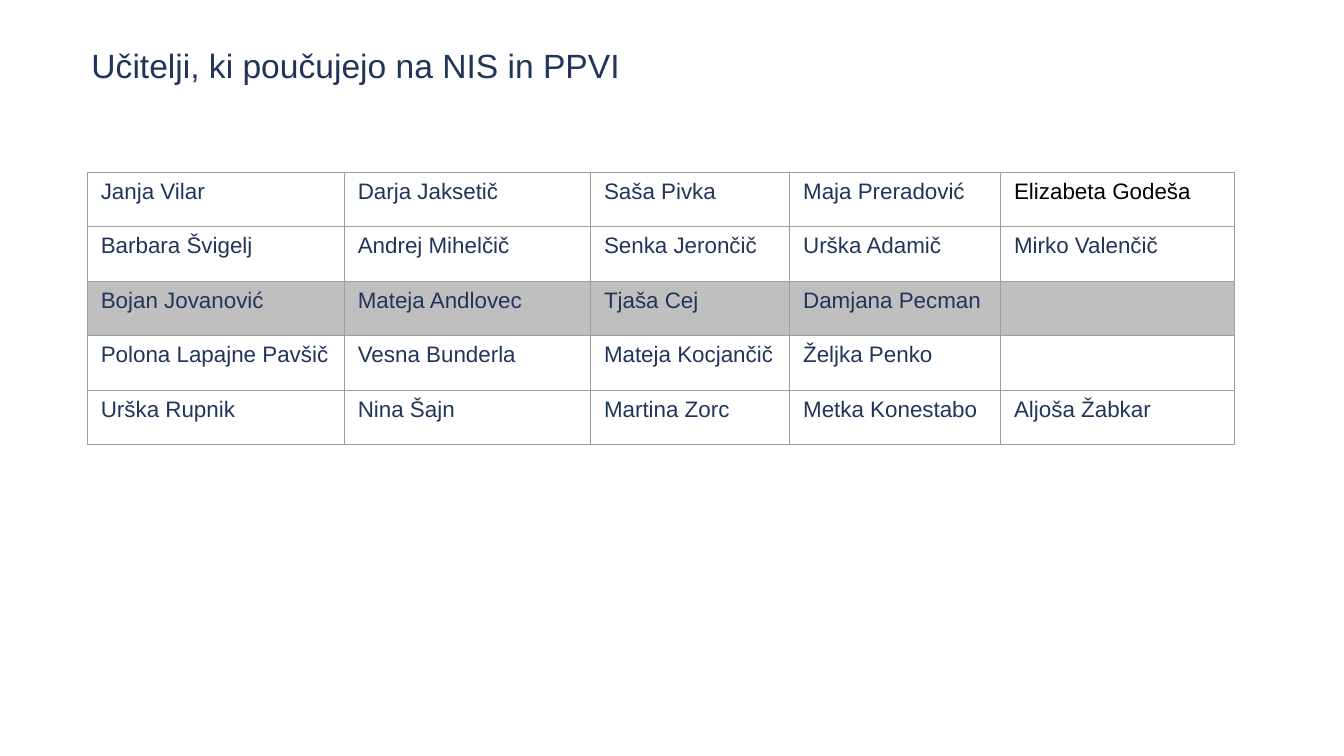
from dataclasses import dataclass

from lxml import etree
from pptx import Presentation
from pptx.dml.color import RGBColor
from pptx.enum import text
from pptx.oxml import ns
from pptx.util import Pt


@dataclass(frozen=True)
class Theme:
    font: str = "Arial"
    ink: str = "21355A"
    guest_ink: str = "000000"
    paper: str = "FFFFFF"
    band: str = "BFBFBF"
    border: str = "9E9E9E"
    border_width: float = 0.75
    title_size: float = 18
    cell_size: float = 12


@dataclass(frozen=True)
class TeacherRow:
    names: tuple[str, ...]
    fill: str


THEME = Theme()
TITLE = "Učitelji, ki poučujejo na NIS in PPVI"
GUEST = "Elizabeta Godeša"
COLUMN_WIDTHS = (137.7, 131.9, 106.7, 113, 125.4)
ROW_HEIGHT = 29.2
ROWS = (
    TeacherRow(("Janja Vilar", "Darja Jaksetič", "Saša Pivka",
                "Maja Preradović", GUEST), THEME.paper),
    TeacherRow(("Barbara Švigelj", "Andrej Mihelčič", "Senka Jerončič",
                "Urška Adamič", "Mirko Valenčič"), THEME.paper),
    TeacherRow(("Bojan Jovanović", "Mateja Andlovec", "Tjaša Cej",
                "Damjana Pecman", ""), THEME.band),
    TeacherRow(("Polona Lapajne Pavšič", "Vesna Bunderla", "Mateja Kocjančič",
                "Željka Penko", ""), THEME.paper),
    TeacherRow(("Urška Rupnik", "Nina Šajn", "Martina Zorc",
                "Metka Konestabo", "Aljoša Žabkar"), THEME.paper),
)


def style_paragraph(p, size: float, color: str) -> None:
    p.alignment = text.PP_ALIGN.LEFT
    p.font.name = THEME.font
    p.font.size = Pt(size)
    p.font.bold = False
    p.font.color.rgb = RGBColor.from_string(color)


def add_borders(cell) -> None:
    tc_pr = cell._tc.get_or_add_tcPr()
    for i, side in enumerate(("lnL", "lnR", "lnT", "lnB")):
        ln = etree.Element(ns.qn(f"a:{side}"), w=str(Pt(THEME.border_width)))
        fill = etree.SubElement(ln, ns.qn("a:solidFill"))
        etree.SubElement(fill, ns.qn("a:srgbClr"), val=THEME.border)
        tc_pr.insert(i, ln)


def set_title(slide) -> None:
    sp = slide.shapes.title
    sp.left, sp.top, sp.width, sp.height = Pt(41.8), Pt(18), Pt(543.6), Pt(36)
    tf = sp.text_frame
    tf.text = TITLE
    tf.word_wrap = True
    tf.auto_size = text.MSO_AUTO_SIZE.NONE
    tf.vertical_anchor = text.MSO_ANCHOR.TOP
    tf.margin_left = tf.margin_right = Pt(7.2)
    tf.margin_top = tf.margin_bottom = Pt(6)
    style_paragraph(tf.paragraphs[0], THEME.title_size, THEME.ink)


def fill_cell(cell, name: str, fill: str) -> None:
    cell.text = name
    cell.fill.solid()
    cell.fill.fore_color.rgb = RGBColor.from_string(fill)
    color = THEME.guest_ink if name == GUEST else THEME.ink
    style_paragraph(cell.text_frame.paragraphs[0], THEME.cell_size, color)
    add_borders(cell)


def add_teachers(slide) -> None:
    table = slide.shapes.add_table(
        len(ROWS), len(COLUMN_WIDTHS), Pt(46.8), Pt(92.2),
        Pt(sum(COLUMN_WIDTHS)), Pt(ROW_HEIGHT * len(ROWS))).table
    table.first_row = table.horz_banding = False
    for column, width in zip(table.columns, COLUMN_WIDTHS):
        column.width = Pt(width)
    for r, row in enumerate(ROWS):
        table.rows[r].height = Pt(ROW_HEIGHT)
        for c, name in enumerate(row.names):
            fill_cell(table.cell(r, c), name, row.fill)


def main() -> None:
    prs = Presentation()
    prs.slide_width, prs.slide_height = Pt(720), Pt(405)
    slide = prs.slides.add_slide(prs.slide_layouts.get_by_name("Title Only"))
    set_title(slide)
    add_teachers(slide)
    prs.save("out.pptx")


if __name__ == "__main__":
    main()
